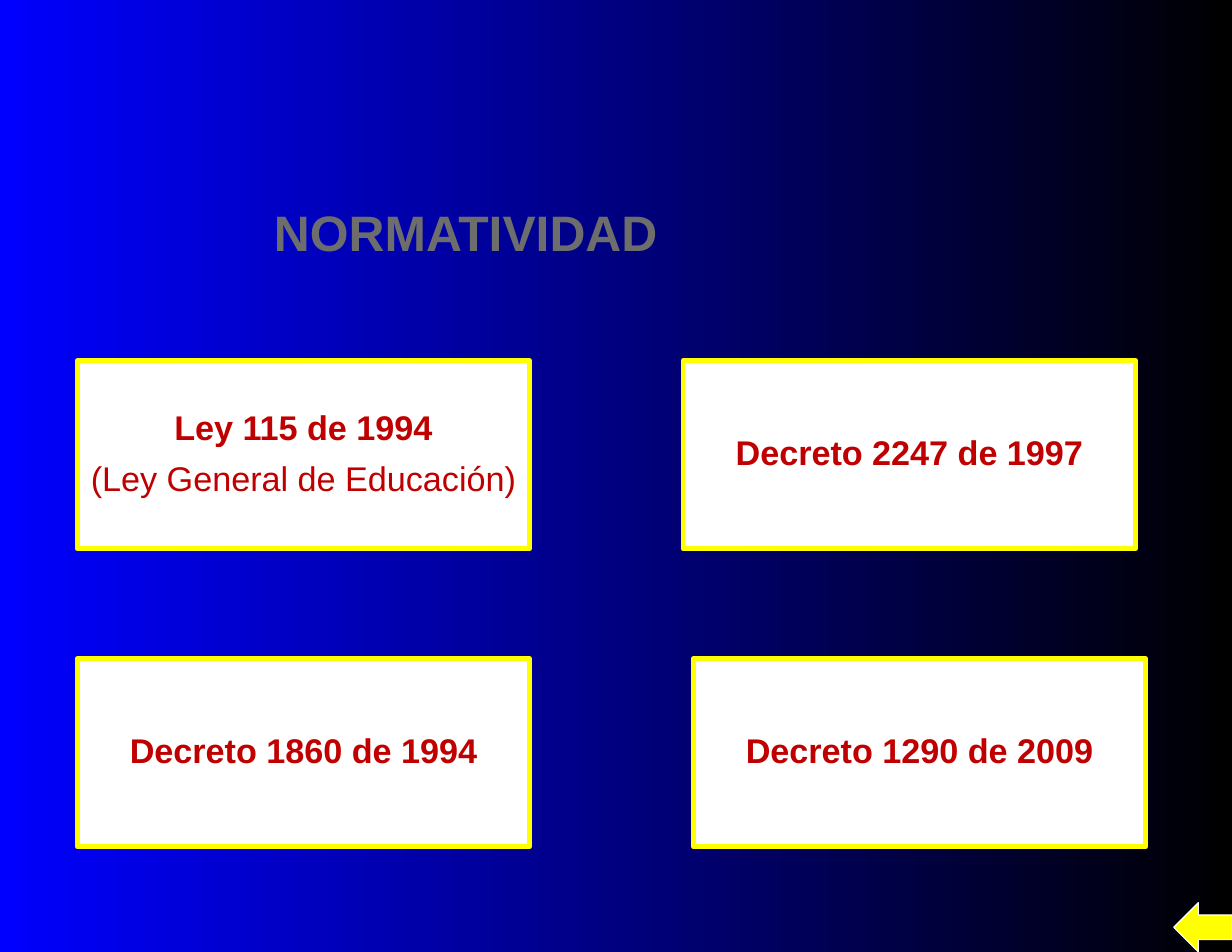
from pptx import Presentation
from pptx.dml.color import RGBColor
from pptx.enum.shapes import MSO_SHAPE as Shape
from pptx.enum.text import MSO_ANCHOR as Anchor, PP_ALIGN as Align
from pptx.util import Inches, Pt

FONT = "Arial"
YELLOW, WHITE = "FFFF00", "FFFFFF"
CARD_SIZE = (4.04, 1.68)
CARDS = [
    (0.69, 3.22, ["Ley 115 de 1994", "(Ley General de Educación)"]),
    (0.69, 5.88, ["Decreto 1860 de 1994"]),
    (6.1, 3.22, ["Decreto 2247 de 1997"]),
    (6.19, 5.88, ["Decreto 1290 de 2009"]),
]


def color(hex_code):
    return RGBColor.from_string(hex_code)


def style_font(font, size, hex_code, bold):
    font.name = FONT
    font.size = Pt(size)
    font.bold = bold
    font.color.rgb = color(hex_code)


def paint_background(slide, left_color, right_color):
    fill = slide.background.fill
    fill.gradient()
    fill.gradient_angle = 0
    for stop, hex_code in zip(fill.gradient_stops, (left_color, right_color)):
        stop.color.rgb = color(hex_code)


def add_outlined(slide, preset, box, fill, line, line_width):
    outlined = slide.shapes.add_shape(preset, *map(Inches, box))
    outlined.shadow.inherit = False
    outlined.fill.solid()
    outlined.fill.fore_color.rgb = color(fill)
    outlined.line.color.rgb = color(line)
    outlined.line.width = Pt(line_width)
    return outlined


def add_card(slide, box, lines):
    """Add a framed law card whose first line is bold."""
    card = add_outlined(slide, Shape.RECTANGLE, box, WHITE, YELLOW, 3)
    frame = card.text_frame
    frame.word_wrap = True
    frame.vertical_anchor = Anchor.MIDDLE
    frame.margin_left = frame.margin_right = Inches(0.01)
    frame.margin_top = frame.margin_bottom = Inches(0.01)
    frame.text = "\n".join(lines)
    for index, paragraph in enumerate(frame.paragraphs):
        paragraph.alignment = Align.CENTER
        paragraph.line_spacing = 0.9
        paragraph.space_after = Pt(9)
        style_font(paragraph.runs[0].font, 22, "C00000", index == 0)


def place_title(slide, box, text):
    title = slide.shapes.title
    title.left, title.top, title.width, title.height = map(Inches, box)
    frame = title.text_frame
    frame.text = text
    frame.word_wrap = True
    frame.vertical_anchor = Anchor.MIDDLE
    heading = frame.paragraphs[0]
    heading.alignment = Align.CENTER
    style_font(heading.runs[0].font, 32, "6D6D6D", True)


def build_regulations_slide(prs):
    slide = prs.slides.add_slide(prs.slide_layouts.get_by_name("Title Only"))
    paint_background(slide, "0000FF", "000000")
    add_outlined(slide, Shape.LEFT_ARROW, (10.48, 8.06, 0.52, 0.44),
                 YELLOW, WHITE, 0.75)
    for left, top, lines in CARDS:
        add_card(slide, (left, top, *CARD_SIZE), lines)
    place_title(slide, (0.74, 1.55, 6.84, 1.04), "NORMATIVIDAD")


def main():
    prs = Presentation()
    prs.slide_width, prs.slide_height = Inches(11), Inches(8.5)
    build_regulations_slide(prs)
    prs.save("out.pptx")


if __name__ == "__main__":
    main()
